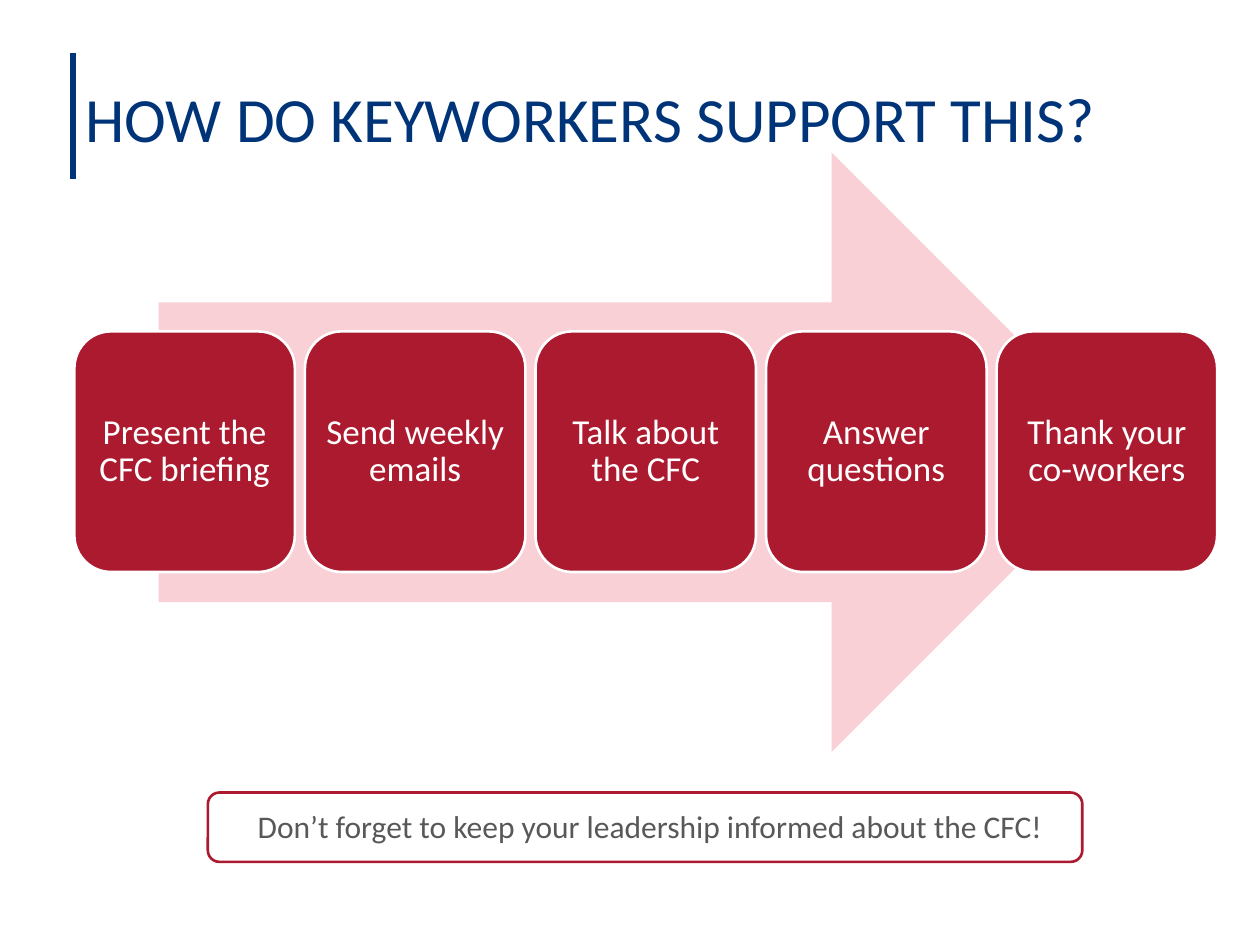
from pptx import Presentation
from pptx.dml.color import RGBColor
from pptx.enum.shapes import MSO_CONNECTOR, MSO_SHAPE
from pptx.enum.text import MSO_ANCHOR, MSO_AUTO_SIZE, PP_ALIGN
from pptx.oxml.ns import qn
from pptx.util import Inches, Pt
from lxml.etree import SubElement

NAVY = "003479"
RED = "AC1A2F"
PINK = "F8D0D6"
GRAY = "58585B"
WHITE = "FFFFFF"
STEPS = [
    "Present the CFC briefing",
    "Send weekly emails",
    "Talk about the CFC",
    "Answer questions",
    "Thank your co-workers",
]
REMINDER = "Don’t forget to keep your leadership informed about the CFC!"


def color(value):
    return RGBColor.from_string(value)


def write_text(shape, text, size, font_color, alignment=PP_ALIGN.CENTER, spacing=1.0):
    text_frame = shape.text_frame
    text_frame.text = text
    text_frame.word_wrap = True
    paragraph = text_frame.paragraphs[0]
    paragraph.alignment = alignment
    paragraph.line_spacing = spacing
    font = paragraph.runs[0].font
    font.name = "Calibri"
    font.size = Pt(size)
    font.color.rgb = color(font_color)
    return text_frame


def add_block(shapes, kind, left, top, width, height, fill, line=None):
    shape = shapes.add_shape(
        kind, Inches(left), Inches(top), Inches(width), Inches(height)
    )
    shape.shadow.inherit = False
    shape.fill.solid()
    shape.fill.fore_color.rgb = color(fill)
    if line:
        shape.line.color.rgb = color(line)
        shape.line.width = Pt(1.5)
    else:
        shape.line.fill.background()
    return shape


def add_title(slide, text):
    rule = slide.shapes.add_connector(
        MSO_CONNECTOR.STRAIGHT, Inches(0.58), Inches(0.42), Inches(0.58), Inches(1.42)
    )
    rule.line.color.rgb = color(NAVY)
    rule.line.width = Pt(3)
    SubElement(rule._element.spPr, qn("a:effectLst"))

    title = slide.shapes.title
    title.left, title.top = Inches(0.58), Inches(0.54)
    title.width, title.height = Inches(9.08), Inches(0.73)
    text_frame = write_text(title, text, 36, NAVY, PP_ALIGN.LEFT, 1.08)
    text_frame.vertical_anchor = MSO_ANCHOR.MIDDLE
    text_frame.auto_size = MSO_AUTO_SIZE.SHAPE_TO_FIT_TEXT


def add_step(slide, left, text):
    card = add_block(
        slide.shapes, MSO_SHAPE.ROUNDED_RECTANGLE, left, 2.63, 1.75, 1.91, RED, WHITE
    )
    text_frame = write_text(card, text, 20, WHITE, spacing=0.9)
    text_frame.vertical_anchor = MSO_ANCHOR.MIDDLE
    text_frame.margin_left = text_frame.margin_right = Inches(0.08)
    text_frame.margin_top = text_frame.margin_bottom = Inches(0.08)


def add_reminder(slide, text):
    group = slide.shapes.add_group_shape()
    add_block(
        group.shapes, MSO_SHAPE.ROUNDED_RECTANGLE, 1.65, 6.29, 6.94, 0.55, WHITE, RED
    )
    text_box = group.shapes.add_textbox(
        Inches(1.69), Inches(6.36), Inches(6.94), Inches(0.4)
    )
    text_frame = write_text(text_box, text, 18, GRAY)
    text_frame.auto_size = MSO_AUTO_SIZE.SHAPE_TO_FIT_TEXT


def main():
    presentation = Presentation()
    presentation.slide_width = Inches(10)
    presentation.slide_height = Inches(7.5)
    slide = presentation.slides.add_slide(presentation.slide_layouts[5])

    add_title(slide, "HOW DO KEYWORKERS SUPPORT THIS?")
    add_block(slide.shapes, MSO_SHAPE.RIGHT_ARROW, 1.26, 1.21, 7.72, 4.76, PINK)
    for index, step in enumerate(STEPS):
        add_step(slide, 0.59 + index * 1.83, step)
    add_reminder(slide, REMINDER)

    presentation.save("out.pptx")


if __name__ == "__main__":
    main()
